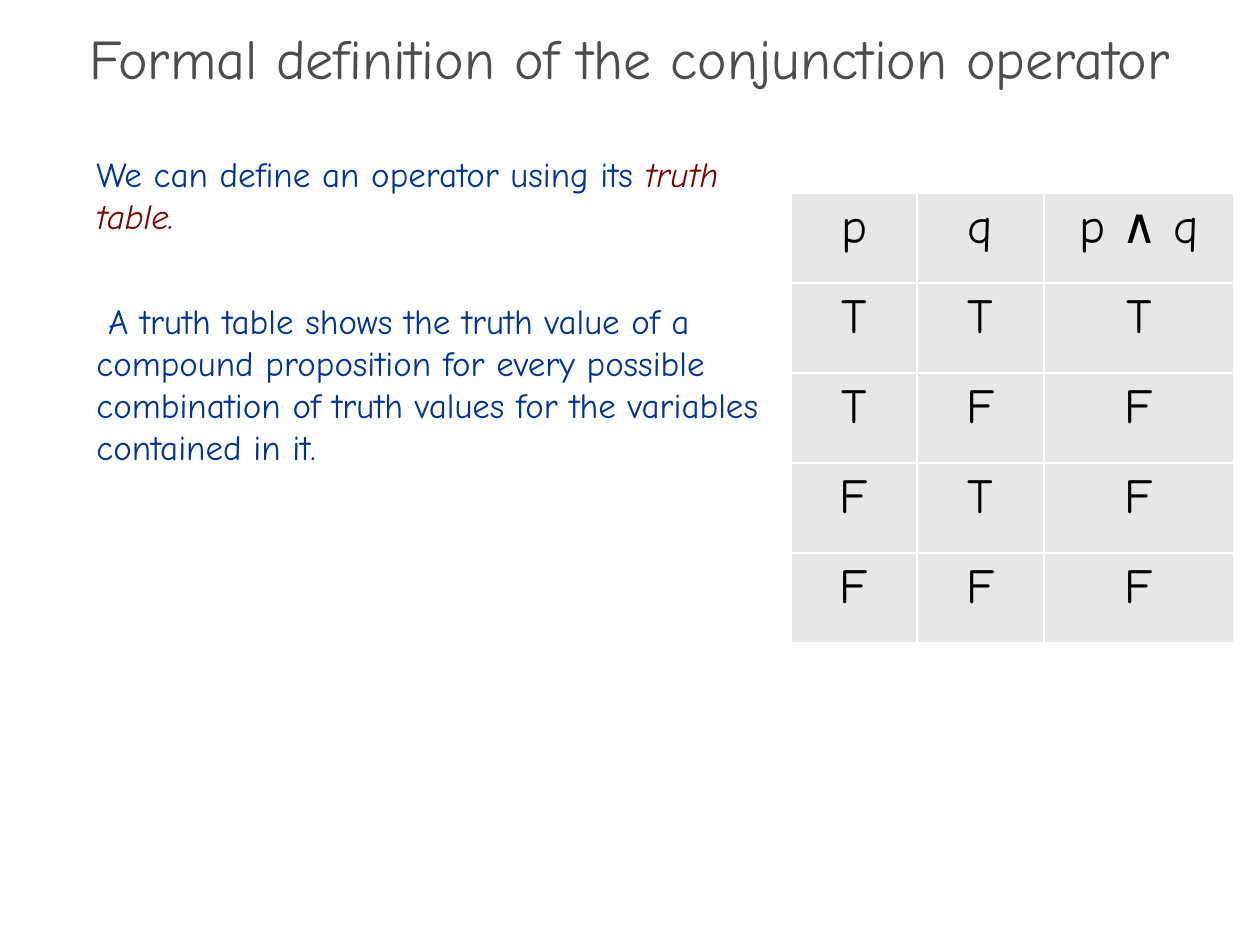
from lxml import etree
from pptx import Presentation
from pptx import util as u
from pptx.dml.color import RGBColor
from pptx.enum import text
from pptx.oxml import ns

PX_PER_INCH = 126
FONT = "Comic Neue"
COLORS = {
    "title": "4D4D4D",
    "body": "003399",
    "term": "800000",
    "cell": "E7E7E7",
    "cell_text": "000000",
    "border": "FFFFFF",
}


def px(length):
    return u.Emu(round(length * 914400 / PX_PER_INCH))


def color(name):
    return RGBColor.from_string(COLORS[name])


def style_font(font, size, color_name):
    font.name = FONT
    font.size = u.Pt(size)
    font.bold = False
    font.color.rgb = color(color_name)


def add_title(page, left, top, width, height):
    title = page.shapes.title
    title.left, title.top = px(left), px(top)
    title.width, title.height = px(width), px(height)
    frame = title.text_frame
    frame.text = "Formal definition of the conjunction operator"
    frame.word_wrap = True
    frame.auto_size = text.MSO_AUTO_SIZE.NONE
    frame.vertical_anchor = text.MSO_ANCHOR.MIDDLE
    para = frame.paragraphs[0]
    para.alignment = text.PP_ALIGN.CENTER
    para.line_spacing = 0.7
    style_font(para.font, 32, "title")


def add_explanation(page, left, top, width, height):
    box = page.shapes.add_textbox(px(left), px(top), px(width), px(height))
    frame = box.text_frame
    frame.word_wrap = True

    # Introduction with the emphasised term
    intro = frame.paragraphs[0]
    intro.space_after = u.Pt(36)
    style_font(intro.font, 20, "body")
    intro.add_run().text = "We can define an operator using its "
    span = intro.add_run()
    span.text = "truth table."
    span.font.italic = True
    span.font.color.rgb = color("term")

    # Meaning of the term
    meaning = frame.add_paragraph()
    meaning.space_after = u.Pt(6)
    style_font(meaning.font, 20, "body")
    meaning.add_run().text = (
        " A truth table shows the truth value of a compound proposition for every "
        "possible combination of truth values for the variables contained in it."
    )


def set_borders(cell):
    properties = cell._tc.get_or_add_tcPr()
    for position, side in enumerate(("lnL", "lnR", "lnT", "lnB")):
        line = etree.Element(ns.qn(f"a:{side}"), w=str(u.Pt(1)))
        fill = etree.SubElement(line, ns.qn("a:solidFill"))
        etree.SubElement(fill, ns.qn("a:srgbClr"), val=COLORS["border"])
        properties.insert(position, line)


def add_truth_table(page, left, top, column_widths, row_height):
    values = [(p, q) for p in (True, False) for q in (True, False)]
    rows = [("p", "q", "p ∧ q")]
    rows += [["T" if value else "F" for value in (p, q, p and q)] for p, q in values]

    table = page.shapes.add_table(
        len(rows), len(column_widths), px(left), px(top),
        px(sum(column_widths)), px(row_height * len(rows)),
    ).table
    table.first_row = table.horz_banding = False
    for column, width in zip(table.columns, column_widths):
        column.width = px(width)

    for row_index, row in enumerate(rows):
        for column_index, wording in enumerate(row):
            cell = table.cell(row_index, column_index)
            cell.text = wording
            cell.fill.solid()
            cell.fill.fore_color.rgb = color("cell")
            set_borders(cell)
            para = cell.text_frame.paragraphs[0]
            para.alignment = text.PP_ALIGN.CENTER
            para.space_before = u.Pt(5.6)
            style_font(para.font, 28, "cell_text")


def main():
    deck = Presentation()
    deck.slide_width, deck.slide_height = px(1260), px(945)
    page = deck.slides.add_slide(deck.slide_layouts[5])
    add_title(page, 0, 34, 1260, 63)
    add_explanation(page, 84, 146, 697, 721)
    add_truth_table(page, 791, 193, (126, 127, 190), 90)
    deck.save("out.pptx")


if __name__ == "__main__":
    main()
